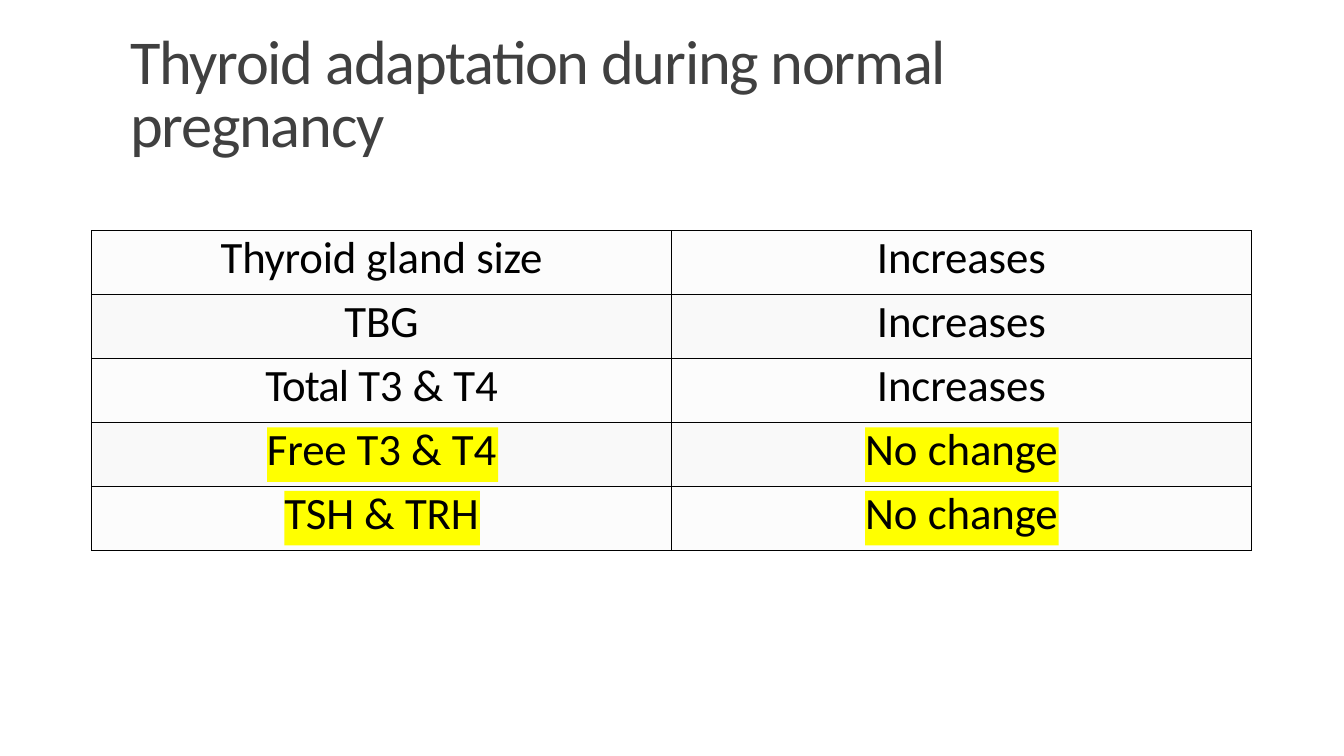
from typing import NamedTuple

from lxml import etree
from pptx import Presentation
from pptx.dml import color
from pptx.enum import shapes, text
from pptx.oxml import ns
from pptx.util import Inches, Pt

FONT = "Calibri"
TABLE_LEFT, TABLE_TOP = 0.91, 2.29
COLUMN_WIDTH, ROW_HEIGHT = 5.75, 0.634


class Run(NamedTuple):
    text: str
    spacing: float = -0.1


class Row(NamedTuple):
    hormone: list[Run]
    change: list[Run]
    fill: str | None = None


class Block(NamedTuple):
    left: float
    top: float
    width: float
    height: float
    fill: str
    opacity: int = 100


INCREASES = [Run("Increases")]
NO_CHANGE = [Run("No ", 0), Run("change")]
AND = Run("& ", 0)

ROWS = [
    Row([Run("Thyroid ", -0.2), Run("gland ", 0), Run("size", -0.2)], INCREASES, "FCFCFC"),
    Row([Run("TBG")], INCREASES, "F9F9F9"),
    Row([Run("Total ", -0.7), Run("T3 "), AND, Run("T4")], INCREASES, "FCFCFC"),
    Row([Run("Free T3 "), AND, Run("T4")], NO_CHANGE),
    Row([Run("TSH "), AND, Run("TRH")], NO_CHANGE),
]

BLOCKS = [
    Block(0.92, 4.2, 11.5, 0.63, "CACACA", 10),
    Block(0.92, 4.83, 11.5, 0.63, "E7E7E7", 10),
    Block(2.82, 4.87, 1.94, 0.54, "FFFF00"),
    Block(2.65, 4.24, 2.29, 0.54, "FFFF00"),
    Block(8.58, 4.87, 1.92, 0.54, "FFFF00"),
    Block(8.58, 4.24, 1.92, 0.54, "FFFF00"),
]


def paint(target, hex_color: str) -> None:
    """Give a fill one solid colour."""
    target.solid()
    target.fore_color.rgb = color.RGBColor.from_string(hex_color)


def write(paragraph, runs: list[Run], size: float, hex_color: str) -> None:
    for part in runs:
        run = paragraph.add_run()
        run.text = part.text
        run.font._element.set("spc", str(round(part.spacing * 100)))
    paragraph.font.name = FONT
    paragraph.font.size = Pt(size)
    paint(paragraph.font.fill, hex_color)


def add_title(slide) -> None:
    box = slide.shapes.add_textbox(Inches(1.29), Inches(0.31), Inches(10.76), Inches(0.82))
    frame = box.text_frame
    frame.word_wrap = True
    frame.margin_left = frame.margin_right = frame.margin_bottom = 0
    frame.margin_top = Inches(0.03)
    paragraph = frame.paragraphs[0]
    paragraph.line_spacing = Pt(45)
    write(paragraph, [Run("Thyroid adaptation during normal", -0.9)], 44.6, "404040")
    paragraph.add_line_break()
    write(paragraph, [Run("pregnancy", -0.9)], 44.6, "404040")


def add_block(slide, block: Block) -> None:
    shape = slide.shapes.add_shape(
        shapes.MSO_SHAPE.RECTANGLE,
        Inches(block.left), Inches(block.top), Inches(block.width), Inches(block.height),
    )
    shape.shadow.inherit = False
    shape.line.fill.background()
    paint(shape.fill, block.fill)
    if block.opacity < 100:
        fill_color = shape._element.spPr.find(f".//{ns.qn('a:srgbClr')}")
        etree.SubElement(fill_color, ns.qn("a:alpha"), val=str(block.opacity * 1000))


def add_borders(cell) -> None:
    properties = cell._tc.get_or_add_tcPr()
    for side in ("lnL", "lnR", "lnT", "lnB"):
        line = etree.SubElement(properties, ns.qn(f"a:{side}"), w=str(Pt(1)))
        fill = etree.SubElement(line, ns.qn("a:solidFill"))
        etree.SubElement(fill, ns.qn("a:srgbClr"), val="000000")


def add_hormone_table(slide) -> None:
    table = slide.shapes.add_table(
        len(ROWS), 2, Inches(TABLE_LEFT), Inches(TABLE_TOP),
        Inches(2 * COLUMN_WIDTH), Inches(len(ROWS) * ROW_HEIGHT),
    ).table
    table.first_row = table.horz_banding = False
    for row_index, row in enumerate(ROWS):
        for column_index, runs in enumerate((row.hormone, row.change)):
            cell = table.cell(row_index, column_index)
            cell.margin_left = cell.margin_right = cell.margin_top = cell.margin_bottom = 0
            add_borders(cell)
            if row.fill:
                paint(cell.fill, row.fill)
            else:
                cell.fill.background()
            paragraph = cell.text_frame.paragraphs[0]
            paragraph.alignment = text.PP_ALIGN.CENTER
            write(paragraph, runs, 32, "000000")


def main() -> None:
    presentation = Presentation()
    presentation.slide_width = Inches(13.33)
    presentation.slide_height = Inches(7.5)
    slide = presentation.slides.add_slide(presentation.slide_layouts[6])
    add_title(slide)
    for block in BLOCKS:
        add_block(slide, block)
    add_hormone_table(slide)
    presentation.save("out.pptx")


if __name__ == "__main__":
    main()
